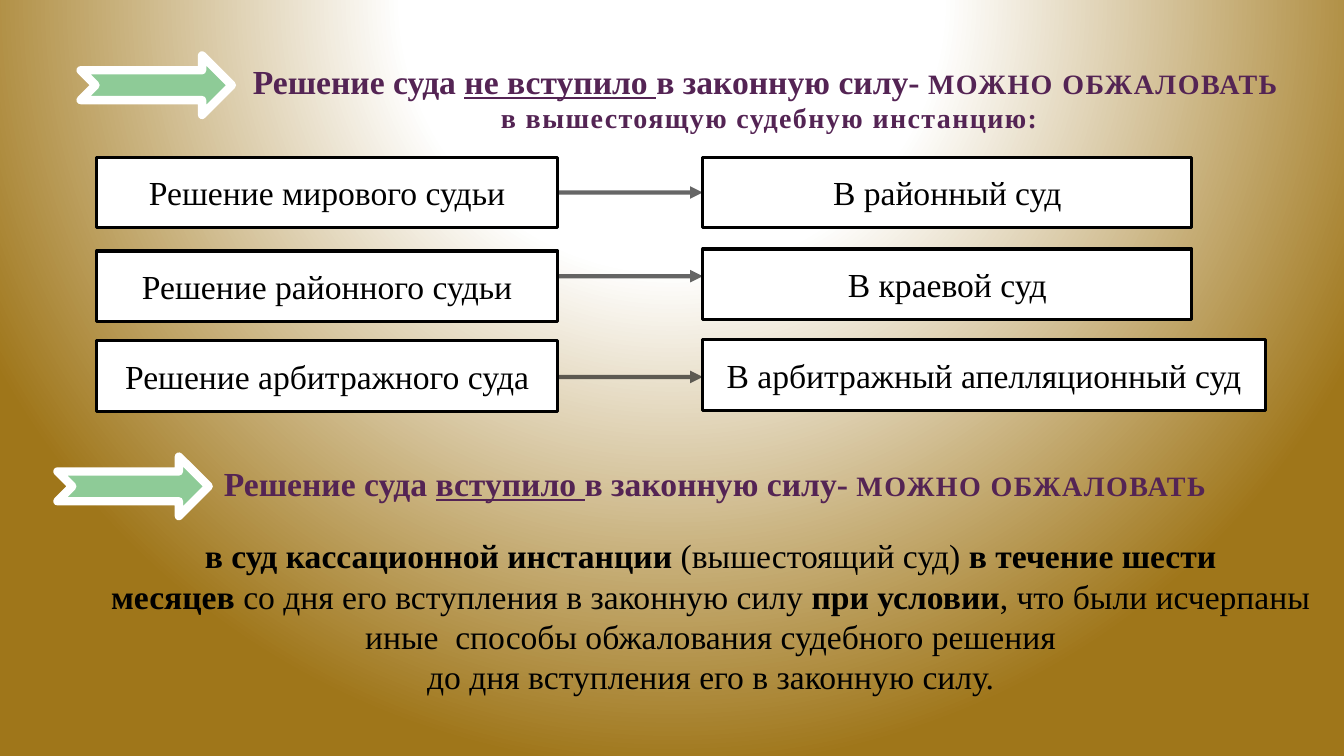
"""Build the slide on appealing court decisions before and after they take legal force."""
from dataclasses import dataclass

from pptx import Presentation, oxml
from pptx.dml.color import RGBColor
from pptx.enum import shapes, text
from pptx.oxml import ns
from pptx.shapes.autoshape import Shape
from pptx.slide import Slide
from pptx.text.text import TextFrame
from pptx.util import Inches, Pt

FONT = "Times New Roman"
WHITE = RGBColor(0xFF, 0xFF, 0xFF)
BLACK = RGBColor(0x00, 0x00, 0x00)
GREEN = RGBColor(0x8E, 0xCB, 0x97)
PURPLE = RGBColor(0x54, 0x24, 0x54)
GOLD = RGBColor(0x9F, 0x76, 0x1A)

COURT_LEFT, APPEAL_LEFT = 0.96, 6.97
COURT_WIDTH, BOX_HEIGHT = 4.57, 0.7


@dataclass(frozen=True)
class Span:
    text: str
    bold: bool = False
    underline: bool = False
    spaced: bool = False


@dataclass(frozen=True)
class Line:
    spans: tuple[Span, ...]
    color: RGBColor = BLACK
    space_before: float = 0


@dataclass(frozen=True)
class Appeal:
    decision: str
    decision_top: float
    court: str
    court_top: float
    court_width: float
    arrow_y: float


def heading(status: str, ending: str) -> Line:
    return Line((
        Span("Решение суда ", bold=True),
        Span(status, bold=True, underline=True),
        Span("в законную силу- ", bold=True),
        Span(ending, bold=True, spaced=True),
    ), PURPLE)


NOT_IN_FORCE = (
    heading("не вступило ", "МОЖНО ОБЖАЛОВАТЬ "),
    Line((Span("в вышестоящую судебную инстанцию:", bold=True, spaced=True),), PURPLE),
)
IN_FORCE = (
    heading("вступило ", "МОЖНО ОБЖАЛОВАТЬ"),
    Line((
        Span("в суд кассационной инстанции ", bold=True),
        Span("(вышестоящий суд) "),
        Span("в течение шести ", bold=True),
    ), space_before=23),
    Line((
        Span("месяцев ", bold=True),
        Span("со дня его вступления в законную силу "),
        Span("при условии", bold=True),
        Span(", что были исчерпаны "),
    )),
    Line((Span("иные  способы обжалования судебного решения "),)),
    Line((Span("до дня вступления его в законную силу. "),)),
)
APPEALS = (
    Appeal("Решение мирового судьи", 1.56, "В районный суд", 1.56, 4.85, 1.91),
    Appeal("Решение районного судьи", 2.49, "В краевой суд", 2.47, 4.85, 2.74),
    Appeal("Решение арбитражного суда", 3.38, "В арбитражный апелляционный суд",
           3.37, 5.58, 3.74),
)
MARKERS = ((0.8, 0.55), (0.57, 4.53))


def paint_background(page: Slide) -> None:
    page.background.fill.solid()
    properties = page.background.fill._xPr
    properties.remove(properties.find(ns.qn("a:solidFill")))
    stops = "".join(
        f'<a:gs pos="{position}"><a:srgbClr val="{color}"/></a:gs>'
        for position, color in ((0, WHITE), (35000, WHITE), (100000, GOLD))
    )
    properties.insert(0, oxml.parse_xml(
        f'<a:gradFill {ns.nsdecls("a")} rotWithShape="1"><a:gsLst>{stops}</a:gsLst>'
        '<a:path path="circle"><a:fillToRect l="50000" t="-80000" r="50000" b="180000"/>'
        '</a:path></a:gradFill>'
    ))


def write_lines(frame: TextFrame, lines: tuple[Line, ...]) -> None:
    for index, line in enumerate(lines):
        para = frame.paragraphs[0] if index == 0 else frame.add_paragraph()
        para.alignment = text.PP_ALIGN.CENTER
        para.space_before = Pt(line.space_before)
        para.font.name = FONT
        para.font.color.rgb = line.color
        for span in line.spans:
            run = para.add_run()
            run.text = span.text
            run.font.size = Pt(20 if span.spaced else 24)
            run.font.bold = span.bold
            run.font.underline = span.underline
            if span.spaced:
                run._r.get_or_add_rPr().set("spc", "100")


def add_outlined(page: Slide, kind: shapes.MSO_SHAPE, left: float, top: float, width: float,
                 height: float, fill: RGBColor, line: RGBColor, weight: float) -> Shape:
    box = page.shapes.add_shape(
        kind, Inches(left), Inches(top), Inches(width), Inches(height))
    box.shadow.inherit = False
    box.fill.solid()
    box.fill.fore_color.rgb = fill
    box.line.color.rgb = line
    box.line.width = Pt(weight)
    return box


def add_court(page: Slide, label: str, left: float, top: float, width: float) -> None:
    box = add_outlined(page, shapes.MSO_SHAPE.RECTANGLE, left, top, width, BOX_HEIGHT,
                       WHITE, BLACK, 2.25)
    box.text_frame.vertical_anchor = text.MSO_ANCHOR.MIDDLE
    write_lines(box.text_frame, (Line((Span(label),)),))


def add_arrow(page: Slide, y: float) -> None:
    arrow = page.shapes.add_connector(
        shapes.MSO_CONNECTOR.STRAIGHT, Inches(COURT_LEFT + COURT_WIDTH), Inches(y),
        Inches(APPEAL_LEFT), Inches(y))
    arrow.line.color.rgb = BLACK
    arrow.line.width = Pt(3)
    stroke = arrow.line._get_or_add_ln()
    color = stroke.find(f'.//{ns.qn("a:srgbClr")}')
    color.append(oxml.parse_xml(f'<a:alpha {ns.nsdecls("a")} val="60000"/>'))
    stroke.append(oxml.parse_xml(f'<a:tailEnd {ns.nsdecls("a")} type="triangle"/>'))
    arrow._element.spPr.append(oxml.parse_xml(f'<a:effectLst {ns.nsdecls("a")}/>'))


def place_text(box: Shape, lines: tuple[Line, ...], wrap: bool) -> None:
    frame = box.text_frame
    frame.word_wrap = wrap
    frame.auto_size = text.MSO_AUTO_SIZE.SHAPE_TO_FIT_TEXT
    frame.vertical_anchor = text.MSO_ANCHOR.TOP
    write_lines(frame, lines)


def main() -> None:
    deck = Presentation()
    deck.slide_width, deck.slide_height = Inches(13.33), Inches(7.5)
    page = deck.slides.add_slide(deck.slide_layouts[5])
    paint_background(page)

    for left, top in MARKERS:
        add_outlined(page, shapes.MSO_SHAPE.NOTCHED_RIGHT_ARROW, left, top, 1.5, 0.59,
                     GREEN, WHITE, 6)

    title = page.shapes.title
    title.left, title.top = Inches(2.31), Inches(0.55)
    title.width, title.height = Inches(10.64), Inches(0.84)
    place_text(title, NOT_IN_FORCE, wrap=False)

    for appeal in APPEALS:
        add_court(page, appeal.decision, COURT_LEFT, appeal.decision_top, COURT_WIDTH)
        add_court(page, appeal.court, APPEAL_LEFT, appeal.court_top, appeal.court_width)
        add_arrow(page, appeal.arrow_y)

    cassation = page.shapes.add_textbox(
        Inches(0.96), Inches(4.54), Inches(12.26), Inches(2.46))
    place_text(cassation, IN_FORCE, wrap=True)

    deck.save("out.pptx")


if __name__ == "__main__":
    main()
